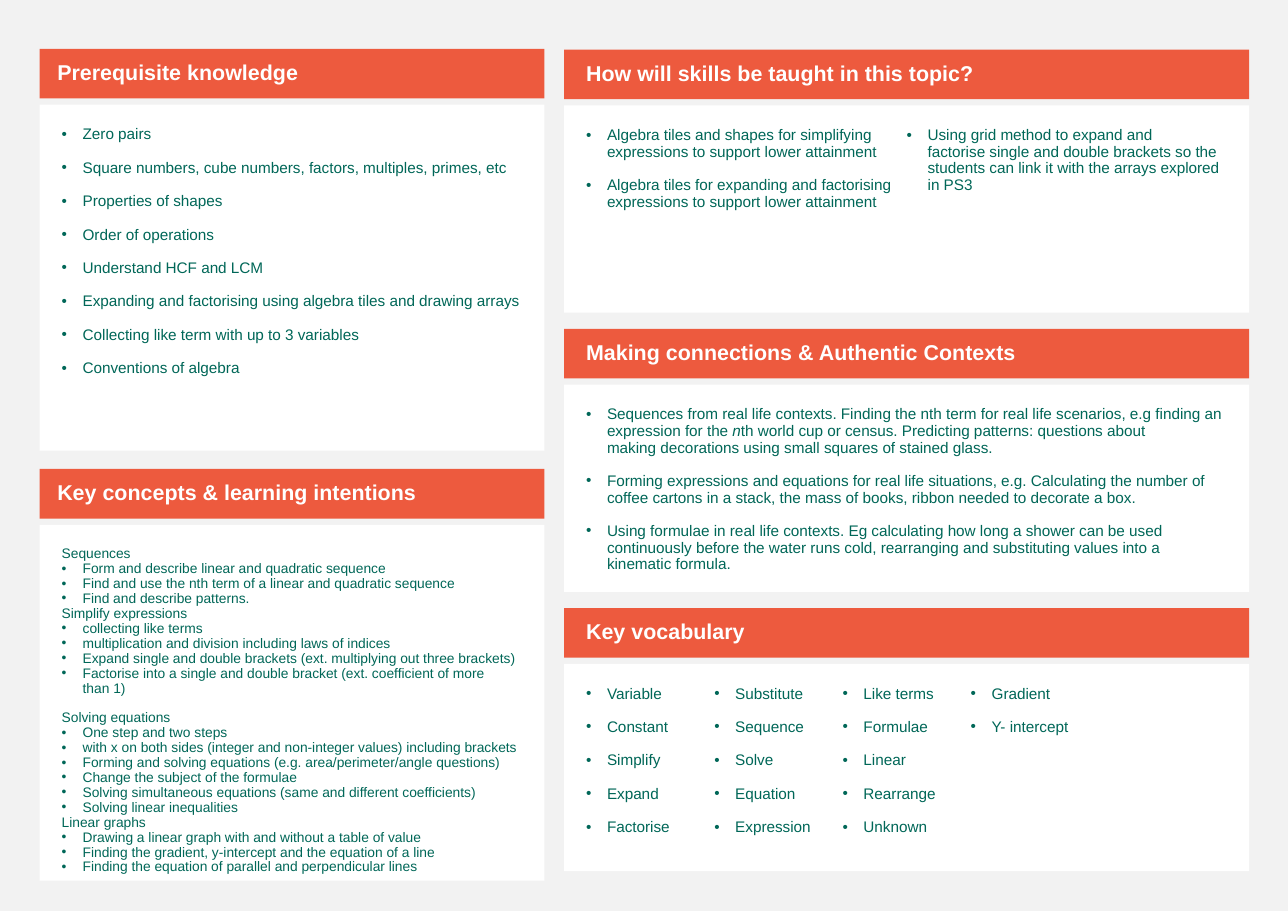
from pptx import Presentation
from pptx import util as u
from pptx.dml.color import RGBColor
from pptx.enum import shapes, text
from pptx.oxml.ns import qn
from lxml import etree

COLORS = {"page": "F2F2F2", "bar": "ED5A3E", "panel": "FFFFFF", "title": "FFFFFF", "body": "006758"}
BAR_H, BODY_DROP, INSET, HANG = 32.4, 36.5, 14.4, 13.7
LEFT_X, LEFT_W = 25.9, 329.8
RIGHT_X, RIGHT_W = 368.6, 447.8

PREREQUISITES = [
    "Zero pairs",
    "Square numbers, cube numbers, factors, multiples, primes, etc",
    "Properties of shapes",
    "Order of operations",
    "Understand HCF and LCM",
    "Expanding and factorising using algebra tiles and drawing arrays",
    "Collecting like term with up to 3 variables",
    "Conventions of algebra",
]
CONCEPTS = [
    ("Sequences", 0, [
        "Form and describe linear and quadratic sequence",
        "Find and use the nth term of a linear and quadratic sequence",
        "Find and describe patterns.",
    ]),
    ("Simplify expressions", 0, [
        "collecting like terms",
        "multiplication and division including laws of indices",
        "Expand single and double brackets (ext. multiplying out three brackets)",
        "Factorise into a single and double bracket (ext. coefficient of more than~1)",
    ]),
    ("Solving equations", 9.7, [
        "One step and two steps",
        "with x on both sides (integer and non-integer values) including brackets",
        "Forming and solving equations (e.g. area/perimeter/angle questions)",
        "Change the subject of the formulae",
        "Solving simultaneous equations (same and different coefficients)",
        "Solving linear inequalities",
    ]),
    ("Linear graphs", 0, [
        "Drawing a linear graph with and without a table of value",
        "Finding the gradient, y-intercept and the equation of a line",
        "Finding the equation of parallel and perpendicular lines",
    ]),
]
SKILLS = [
    ["Algebra tiles and shapes for simplifying expressions to support lower attainment",
     "Algebra tiles for expanding and factorising expressions to support lower attainment"],
    ["Using grid method to expand and factorise~single and double brackets so the "
     "students can link it with the arrays explored in~PS3"],
]
CONNECTIONS = [
    "Sequences from real life contexts. Finding the nth term for real life scenarios, e.g finding an "
    "expression for the *n*th world cup or census. Predicting patterns: questions about "
    "making~decorations~using small squares of stained glass.",
    "Forming expressions and equations for real life situations, e.g. Calculating the number of "
    "coffee cartons in a stack, the mass of books, ribbon needed to decorate a box.",
    "Using formulae in real life contexts. Eg calculating how long a shower can be used "
    "continuously before the water runs cold, rearranging and substituting values into a kinematic formula.",
]
VOCABULARY = [
    "Variable", "Constant", "Simplify", "Expand", "Factorise",
    "Substitute", "Sequence", "Solve", "Equation", "Expression",
    "Like terms", "Formulae", "Linear", "Rearrange", "Unknown",
    "Gradient", "Y- intercept",
]


def color(name):
    """Return the named colour."""
    return RGBColor.from_string(COLORS[name])


def write(p, content, size=10, fill="body", bold=False, bullet=False, before=11):
    """Write formatted text; asterisks enclose italics and a tilde is a no-break space."""
    p.alignment = text.PP_ALIGN.LEFT
    p.line_spacing = 0.9
    p.space_before = u.Pt(before)
    if bullet:
        pPr = p._p.get_or_add_pPr()
        pPr.set("marL", str(u.Pt(HANG)))
        pPr.set("indent", str(-u.Pt(HANG)))
        etree.SubElement(pPr, qn("a:buFont"), typeface="Arial")
        etree.SubElement(pPr, qn("a:buChar"), char="•")
    for i, part in enumerate(content.replace("~", chr(160)).split("*")):
        r = p.add_run()
        r.text = part
        r.font.name = "Arial"
        r.font.size = u.Pt(size)
        r.font.bold = bold
        r.font.italic = i % 2 == 1
        r.font.color.rgb = color(fill)


def box(s, x, y, w, h, fill, insets, anchor):
    """Add a plain rectangle and return its text frame."""
    sp = s.shapes.add_shape(shapes.MSO_SHAPE.RECTANGLE, u.Pt(x), u.Pt(y), u.Pt(w), u.Pt(h))
    sp.shadow.inherit = False
    sp.line.fill.background()
    if fill:
        sp.fill.solid()
        sp.fill.fore_color.rgb = color(fill)
    else:
        sp.fill.background()
    tf = sp.text_frame
    tf.word_wrap = True
    tf.vertical_anchor = anchor
    tf.margin_left, tf.margin_top, tf.margin_right, tf.margin_bottom = map(u.Pt, insets)
    return tf


def fill_frame(tf, paragraphs):
    """Write one paragraph for each pair of text and format."""
    for i, (content, style) in enumerate(paragraphs):
        write(tf.paragraphs[0] if i == 0 else tf.add_paragraph(), content, **style)


def bullets(items, **style):
    """Pair each item with a bulleted format."""
    return [(item, dict(bullet=True, **style)) for item in items]


def section(s, x, y, w, h, title, columns, title_inset=INSET, flow=1):
    """Place a title bar and the white body under it, with its text columns."""
    tf = box(s, x, y, w, BAR_H, "bar", (title_inset, 3.6, 7.2, 3.6), text.MSO_ANCHOR.MIDDLE)
    write(tf.paragraphs[0], title, size=14, fill="title", bold=True)
    step = (w - 2 * INSET) / len(columns)
    for i, paragraphs in enumerate(columns):
        right = INSET + (len(columns) - 1 - i) * step
        tf = box(s, x + i * step, y + BODY_DROP, w - i * step, h, None if i else "panel",
                 (INSET, INSET, right, INSET), text.MSO_ANCHOR.TOP)
        if flow > 1:
            tf._txBody.bodyPr.set("numCol", str(flow))
        fill_frame(tf, paragraphs)


def left_side(s, x, w):
    """Place the prerequisite and concept sections."""
    concepts = []
    for heading, before, items in CONCEPTS:
        concepts.append((heading, dict(size=9, before=before)))
        concepts += bullets(items, size=9, before=0)
    section(s, x, 31.9, w, 226.1, "Prerequisite knowledge", [bullets(PREREQUISITES)], title_inset=11.5)
    section(s, x, 306.5, w, 232.6, "Key concepts & learning intentions", [concepts], title_inset=11.5)


def right_side(s, x, w):
    """Place three equally spaced sections for skills, connections and vocabulary."""
    sections = [
        ("How will skills be taught in this topic?", [bullets(items) for items in SKILLS], 1),
        ("Making connections & Authentic Contexts", [bullets(CONNECTIONS)], 1),
        ("Key vocabulary", [bullets(VOCABULARY)], 5),
    ]
    for i, (title, columns, flow) in enumerate(sections):
        section(s, x, 32.4 + i * 182.5, w, 135.4, title, columns, flow=flow)


def main():
    """Build the topic overview and save it."""
    prs = Presentation()
    prs.slide_width, prs.slide_height = u.Pt(841.7), u.Pt(595.4)
    s = prs.slides.add_slide(prs.slide_layouts[6])
    s.background.fill.solid()
    s.background.fill.fore_color.rgb = color("page")
    left_side(s, LEFT_X, LEFT_W)
    right_side(s, RIGHT_X, RIGHT_W)
    prs.save("out.pptx")


if __name__ == "__main__":
    main()
